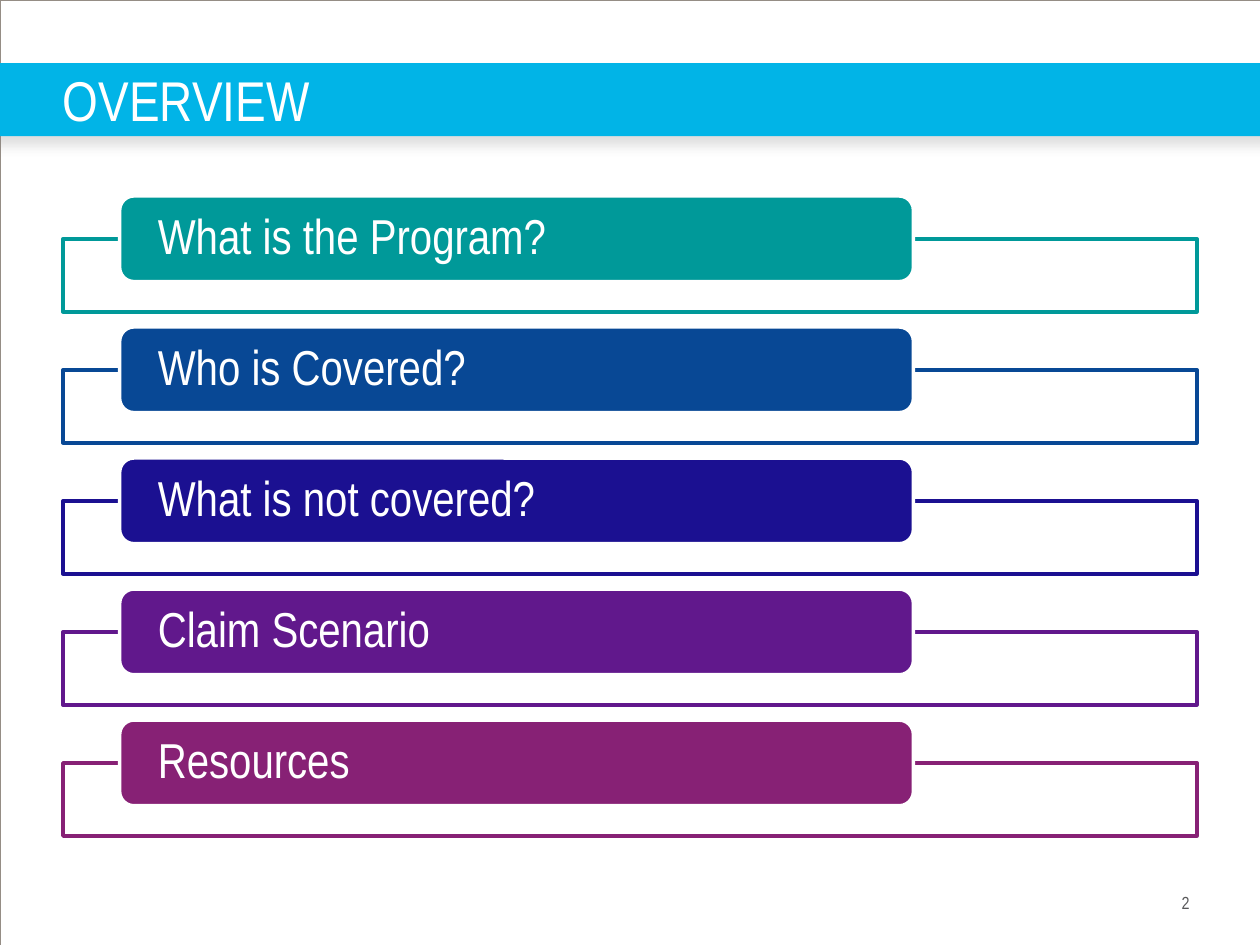
from lxml import etree
from pptx import Presentation
from pptx.dml.color import RGBColor
from pptx.enum.shapes import MSO_SHAPE
from pptx.enum.text import MSO_ANCHOR, PP_ALIGN
from pptx.oxml.ns import qn
from pptx.util import Inches, Pt

COLORS = {
    "white": "FFFFFF", "border": "958D85", "banner": "01B4E7",
    "shadow": "808080", "number": "58585A",
    "teal": "009999", "blue": "084895", "navy": "1B1091",
    "violet": "61188C", "plum": "872175",
}
TOPICS = [
    ("What is the Program?", "teal"),
    ("Who is Covered?", "blue"),
    ("What is not covered?", "navy"),
    ("Claim Scenario", "violet"),
    ("Resources", "plum"),
]
COLS, ROWS = 20, 15
FIRST_ROW, ROW_STEP = 3.11, 2.08


class Deck:
    """Slide style and drawing methods; lengths are grid columns and rows."""

    font = "Arial Narrow"

    def __init__(self):
        self.prs = Presentation()
        self.prs.slide_width, self.prs.slide_height = Inches(10), Inches(7.5)
        self.s = self.prs.slides.add_slide(self.prs.slide_layouts[6])

    def color(self, name):
        return RGBColor.from_string(COLORS[name])

    def place(self, col, row, cols, rows):
        w, h = self.prs.slide_width / COLS, self.prs.slide_height / ROWS
        return int(col * w), int(row * h), int(cols * w), int(rows * h)

    def box(self, area, fill=None, line=None, width=2, kind=MSO_SHAPE.RECTANGLE):
        sp = self.s.shapes.add_shape(kind, *self.place(*area))
        sp.shadow.inherit = False
        if fill:
            sp.fill.solid()
            sp.fill.fore_color.rgb = self.color(fill)
        else:
            sp.fill.background()
        if line:
            sp.line.color.rgb = self.color(line)
            sp.line.width = Pt(width)
        else:
            sp.line.fill.background()
        return sp

    def set_alpha(self, color_element, percent):
        etree.SubElement(color_element, qn("a:alpha"), val=str(percent * 1000))

    def fade(self, sp, percent):
        fill = sp._element.spPr.find(qn("a:solidFill"))
        self.set_alpha(fill.find(qn("a:srgbClr")), percent)

    def drop_shadow(self, sp, blur, distance, percent):
        effects = sp._element.spPr.find(qn("a:effectLst"))
        shadow = etree.SubElement(
            effects, qn("a:outerShdw"), blurRad=str(Pt(blur)),
            dist=str(Pt(distance)), dir="5400000", rotWithShape="0")
        rgb = etree.SubElement(shadow, qn("a:srgbClr"), val=COLORS["shadow"])
        self.set_alpha(rgb, percent)

    def set_text(self, sp, text, size, color="white", left=0, right=0,
                 align=PP_ALIGN.LEFT, anchor=MSO_ANCHOR.MIDDLE, spacing=None):
        tf = sp.text_frame
        tf.text = text
        tf.word_wrap = True
        tf.vertical_anchor = anchor
        tf.margin_left, tf.margin_right = Inches(left), Inches(right)
        tf.margin_top = tf.margin_bottom = 0
        p = tf.paragraphs[0]
        p.alignment = align
        p.line_spacing = spacing
        font = p.runs[0].font
        font.name, font.size = self.font, Pt(size)
        font.color.rgb = self.color(color)

    def label(self, area, text, size, **style):
        sp = self.s.shapes.add_textbox(*self.place(*area))
        self.set_text(sp, text, size, **style)

    def banner(self, title):
        bar = self.box((-0.17, 1, 20.34, 1.16), fill="banner")
        self.drop_shadow(bar, blur=7, distance=4.8, percent=25)
        self.label((1, 1, 13.34, 1.16), title, 32)

    def topic(self, row, text, color):
        frame = self.box((1, row + 0.68, 18, 1.16), fill="white", line=color)
        self.fade(frame, 90)
        tab = self.box((1.9, row, 12.6, 1.36), fill=color, line="white",
                       kind=MSO_SHAPE.ROUNDED_RECTANGLE)
        self.set_text(tab, text, 28, left=0.27, right=0.27, spacing=0.9)


def main():
    deck = Deck()
    deck.label((15.5, 14.16, 3.5, 0.34), "2", 10, color="number", right=0.06,
               align=PP_ALIGN.RIGHT, anchor=MSO_ANCHOR.TOP)
    deck.box((0, 0, COLS, ROWS), line="border", width=0.13)
    deck.banner("OVERVIEW")
    for i, (text, color) in enumerate(TOPICS):
        deck.topic(FIRST_ROW + i * ROW_STEP, text, color)
    deck.prs.save("out.pptx")


if __name__ == "__main__":
    main()
